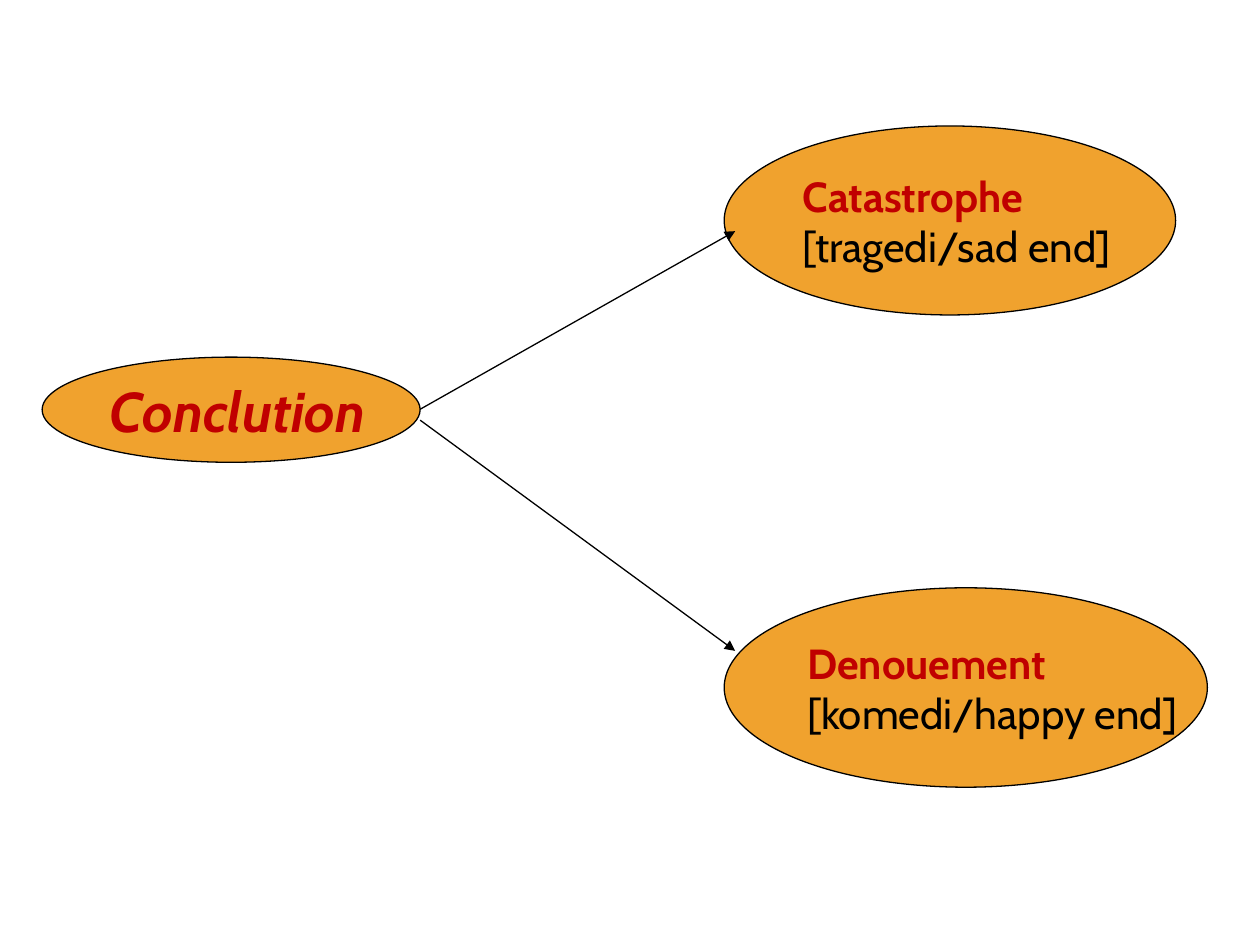
"""Build a slide that shows the two kinds of conclusion of a drama."""
import pptx
import pptx.dml.color
import pptx.enum.shapes
import pptx.enum.text
import pptx.oxml.ns
import pptx.util
from lxml import etree

Cm = pptx.util.Cm
RGBColor = pptx.dml.color.RGBColor

ORANGE = RGBColor(0xF0, 0xA2, 0x2E)
RED = RGBColor(0xC0, 0x00, 0x00)
BLACK = RGBColor(0x00, 0x00, 0x00)
FONT = "Cabin"
LINE_WIDTH = pptx.util.Pt(0.75)


def write_text(paragraph, text, size=24, color=BLACK, bold=False, italic=False):
    """Write one formatted, left-aligned run into a paragraph."""
    paragraph.alignment = pptx.enum.text.PP_ALIGN.LEFT
    run = paragraph.add_run()
    run.text = text
    run.font.name = FONT
    run.font.size = pptx.util.Pt(size)
    run.font.color.rgb = color
    run.font.bold = bold
    run.font.italic = italic


def add_ellipse(slide, left, top, width, height):
    """Add an outlined orange ellipse and return its text frame."""
    shape = slide.shapes.add_shape(
        pptx.enum.shapes.MSO_SHAPE.OVAL, Cm(left), Cm(top), Cm(width), Cm(height)
    )
    shape.shadow.inherit = False
    shape.fill.solid()
    shape.fill.fore_color.rgb = ORANGE
    shape.line.color.rgb = BLACK
    shape.line.width = LINE_WIDTH
    text_frame = shape.text_frame
    text_frame.word_wrap = False
    text_frame.vertical_anchor = pptx.enum.text.MSO_ANCHOR.MIDDLE
    return text_frame


def add_ending(slide, name, description, left, top, width, height):
    """Add an ellipse with the name of an ending above its description."""
    text_frame = add_ellipse(slide, left, top, width, height)
    write_text(text_frame.paragraphs[0], name, color=RED, bold=True)
    write_text(text_frame.add_paragraph(), description)


def add_arrow(slide, start_x, start_y, end_x, end_y):
    """Add a thin black line with a triangle at its end."""
    connector = slide.shapes.add_connector(
        pptx.enum.shapes.MSO_CONNECTOR.STRAIGHT,
        Cm(start_x), Cm(start_y), Cm(end_x), Cm(end_y),
    )
    connector.line.color.rgb = BLACK
    connector.line.width = LINE_WIDTH
    line = connector.line._get_or_add_ln()
    etree.SubElement(line, pptx.oxml.ns.qn("a:tailEnd"), type="triangle")
    etree.SubElement(connector._element.spPr, pptx.oxml.ns.qn("a:effectLst"))


def main():
    """Create the presentation and save it."""
    presentation = pptx.Presentation()
    presentation.slide_width = Cm(25.4)
    presentation.slide_height = Cm(19.05)
    slide = presentation.slides.add_slide(presentation.slide_layouts[6])

    conclusion = add_ellipse(slide, 0.85, 7.2, 7.62, 2.12)
    write_text(conclusion.paragraphs[0], "Conclution",
               size=32, color=RED, bold=True, italic=True)
    add_ending(slide, "Catastrophe", "[tragedi/sad end]", 14.6, 2.54, 9.1, 3.81)
    add_ending(slide, "Denouement", "[komedi/happy end]", 14.6, 11.85, 9.74, 4.02)

    add_arrow(slide, 8.47, 8.25, 14.82, 4.66)
    add_arrow(slide, 8.47, 8.47, 14.82, 13.12)
    presentation.save("out.pptx")


if __name__ == "__main__":
    main()
